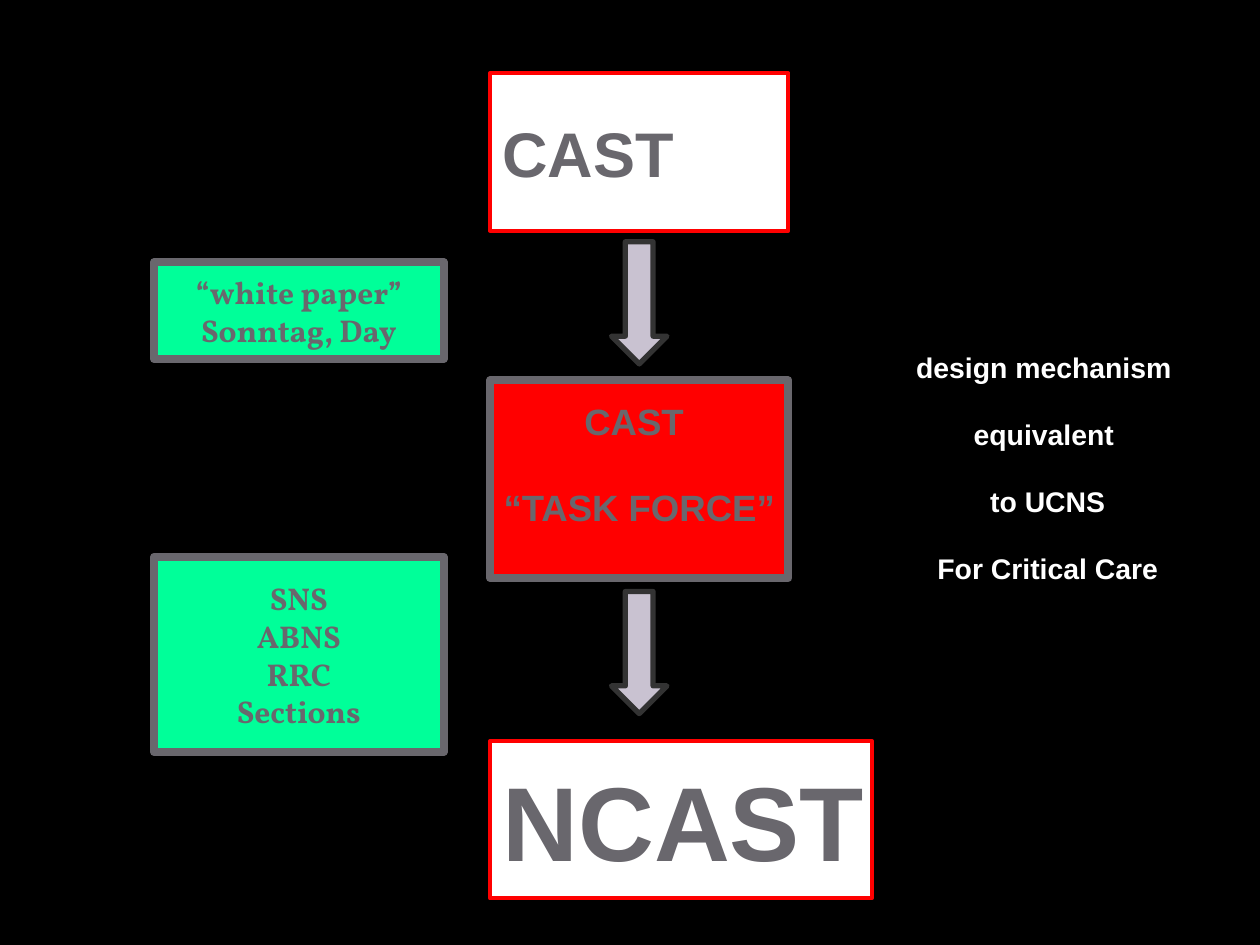
from pptx import Presentation
from pptx.dml.color import RGBColor
from pptx.enum.shapes import MSO_SHAPE as Shape
from pptx.enum.text import MSO_ANCHOR as Anchor, PP_ALIGN as Align
from pptx.util import Pt

COLORS = {
    "black": "000000",
    "white": "FFFFFF",
    "red": "FF0000",
    "green": "00FF99",
    "gray": "69676D",
    "lilac": "C9C2D1",
    "charcoal": "333333",
}


def color(name):
    return RGBColor.from_string(COLORS[name])


class FlowPage:
    """Holds the page and draws each kind of element, in points."""

    def __init__(self, page):
        self.page = page
        page.background.fill.solid()
        page.background.fill.fore_color.rgb = color("black")

    def shape(self, kind, place, fill, line, width):
        shape = self.page.shapes.add_shape(kind, *map(Pt, place))
        shape.shadow.inherit = False
        shape.fill.solid()
        shape.fill.fore_color.rgb = color(fill)
        shape.line.color.rgb = color(line)
        shape.line.width = Pt(width)
        return shape

    def label(self, shape, lines, size, font="Arial", ink="gray",
              align=Align.CENTER, lowered=False, bottom=3.6):
        frame = shape.text_frame
        frame.word_wrap = False
        frame.vertical_anchor = Anchor.MIDDLE
        frame.margin_bottom = Pt(bottom)
        for index, line in enumerate(lines):
            para = frame.add_paragraph() if index else frame.paragraphs[0]
            para.alignment = align
            para.font.name = font
            para.font.size = Pt(size)
            para.font.bold = True
            para.font.color.rgb = color(ink)
            span = para.add_run()
            span.text = line
            if lowered:
                span.font._element.set("baseline", "-25000")

    def stage(self, place, name, size):
        box = self.shape(Shape.RECTANGLE, place, "white", "red", 2.25)
        self.label(box, [name], size, align=Align.LEFT)

    def task_force(self, place, lines):
        box = self.shape(Shape.RECTANGLE, place, "red", "gray", 4.5)
        self.label(box, lines, 36, lowered=True, bottom=45)

    def source(self, place, lines):
        box = self.shape(Shape.RECTANGLE, place, "green", "gray", 4.5)
        self.label(box, lines, 18, font="Vollkorn")

    def arrow(self, place):
        self.shape(Shape.DOWN_ARROW, place, "lilac", "charcoal", 3)

    def note(self, place, lines):
        box = self.page.shapes.add_textbox(*map(Pt, place))
        self.label(box, lines, 28, ink="white", lowered=True)


def main():
    deck = Presentation()
    deck.slide_width, deck.slide_height = Pt(720), Pt(540)
    flow = FlowPage(deck.slides.add_slide(deck.slide_layouts[6]))

    # Central flow
    left, width = 280, 170.6
    flow.stage((left, 41.8, width, 90), "CAST", 36)
    flow.task_force((left, 217.4, width, 113), ["CAST ", "“TASK FORCE”"])
    flow.stage((left, 423.4, 218.2, 90), "NCAST", 60)

    # Arrows centred under the first two boxes
    arrow_width = 31.7
    for top in (138.2, 338):
        flow.arrow((left + (width - arrow_width) / 2, top, arrow_width, 69.8))

    # Sources on the left
    flow.source((88, 149.8, 165.6, 55.4), ["“white paper”", "Sonntag, Day"])
    flow.source((88, 318.2, 165.6, 111.6), ["SNS", "ABNS", "RRC", "Sections"])

    # Goal on the right
    flow.note((491.8, 167.8, 213.8, 180),
              ["design mechanism ", "equivalent ", "to UCNS", "For Critical Care"])

    deck.save("out.pptx")


if __name__ == "__main__":
    main()
